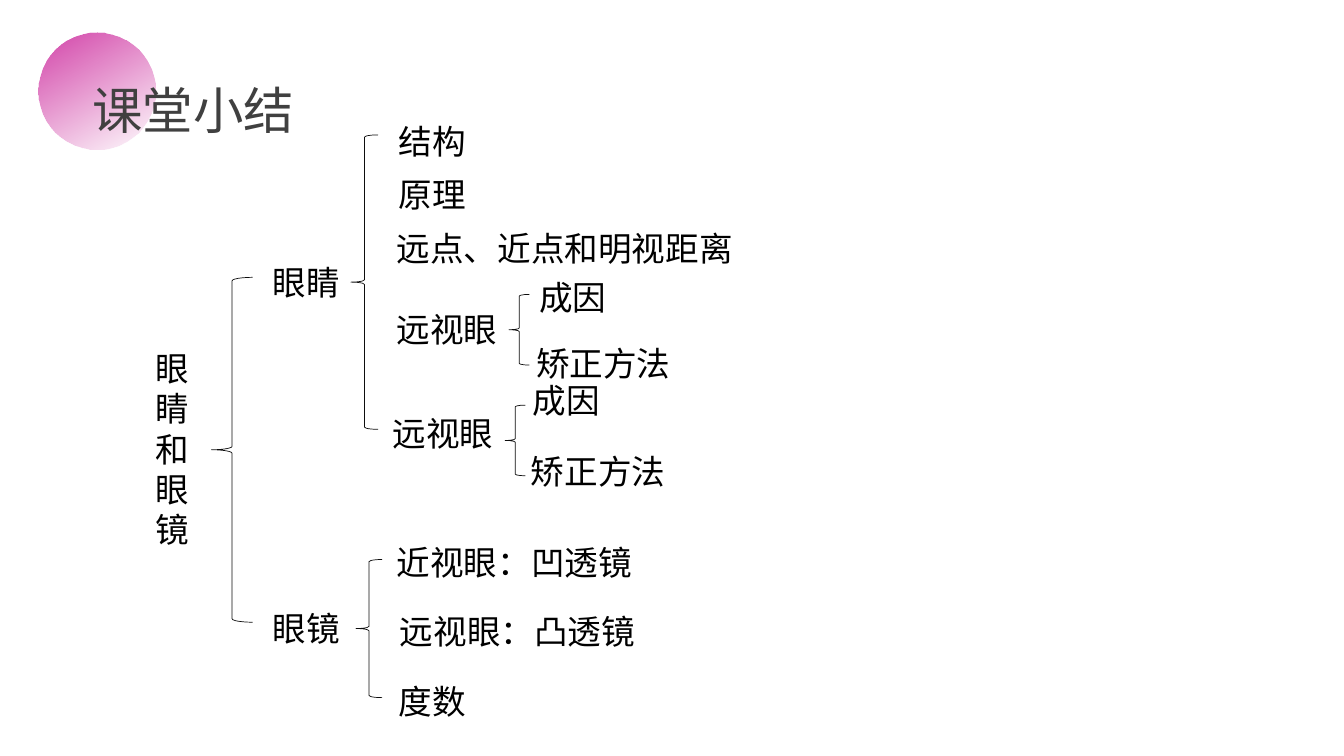
from lxml.etree import SubElement
from pptx import Presentation
from pptx.dml.color import RGBColor
from pptx.enum.shapes import MSO_SHAPE
from pptx.oxml.ns import qn
from pptx.util import Cm, Pt

FONT = "Arial"
BLACK = RGBColor(0x00, 0x00, 0x00)
TITLE_GRAY = RGBColor(0x40, 0x40, 0x40)
BRACE_GRAY = RGBColor(0x0D, 0x0D, 0x0D)
PINK = RGBColor(0xD3, 0x43, 0xA9)

# All lengths are in centimetres.
TITLE = ("课堂小结", 2.08, 1.88, 13.46)
ROOT = ("眼睛和眼镜", 3.68, 8.64, 1.75)  # narrow, so one character per line
TOPICS = [  # text, left, top, width
    ("眼睛", 6.63, 6.48, 3.18),
    ("结构", 9.8, 2.92, 3.2),
    ("原理", 9.8, 4.27, 3.2),
    ("远点、近点和明视距离", 9.75, 5.61, 12.14),
    ("远视眼", 9.75, 7.67, 4.5),
    ("成因", 13.34, 6.86, 3.43),
    ("矫正方法", 13.26, 8.51, 5.54),
    ("远视眼", 9.65, 10.29, 4.5),
    ("成因", 13.18, 9.45, 3.45),
    ("矫正方法", 13.13, 11.23, 5.54),
    ("眼镜", 6.63, 15.19, 3.18),
    ("近视眼：凹透镜", 9.75, 13.54, 8.81),
    ("远视眼：凸透镜", 9.83, 15.27, 8.81),
    ("度数", 9.8, 17.04, 3.84),
]
BRACES = [  # left, top, width, height
    (8.84, 3.4, 0.69, 7.42),
    (12.83, 7.42, 0.51, 1.78),
    (12.73, 10.21, 0.51, 1.78),
    (8.97, 14.1, 0.66, 3.48),
    (5.33, 6.99, 1.04, 8.69),
]
CIRCLE = (0.97, 0.81, 2.95, 2.95)


def add_text(slide, text, left, top, width, height=1.28, size=24, color=BLACK):
    text_box = slide.shapes.add_textbox(Cm(left), Cm(top), Cm(width), Cm(height))
    text_box.text_frame.word_wrap = True
    run = text_box.text_frame.paragraphs[0].add_run()
    run.text = text
    run.font.name = FONT
    run.font.size = Pt(size)
    run.font.color.rgb = color


def add_plain_shape(slide, kind, box):
    shape = slide.shapes.add_shape(kind, *(Cm(length) for length in box))
    shape.shadow.inherit = False
    return shape


def add_fading_circle(slide):
    """Draw the title circle, fading from pink to fully transparent."""
    circle = add_plain_shape(slide, MSO_SHAPE.OVAL, CIRCLE)
    circle.line.fill.background()
    circle.fill.gradient()
    circle.fill.gradient_angle = 300
    for position, stop in enumerate(circle.fill.gradient_stops):
        stop.position = position
        stop.color.rgb = PINK
    last_color = list(circle.element.iter(qn("a:srgbClr")))[-1]
    SubElement(last_color, qn("a:alpha"), val="0")


def add_brace(slide, box):
    brace = add_plain_shape(slide, MSO_SHAPE.LEFT_BRACE, box)
    brace.fill.background()
    brace.line.color.rgb = BRACE_GRAY
    brace.line.width = Pt(0.5)


def main():
    presentation = Presentation()
    presentation.slide_width = Cm(33.87)
    presentation.slide_height = Cm(19.05)
    slide = presentation.slides.add_slide(presentation.slide_layouts[6])

    add_fading_circle(slide)
    add_text(slide, *TITLE, height=1.8, size=36, color=TITLE_GRAY)
    add_text(slide, *ROOT, height=5.38)
    for topic in TOPICS:
        add_text(slide, *topic)
    for box in BRACES:
        add_brace(slide, box)

    presentation.save("out.pptx")


if __name__ == "__main__":
    main()
